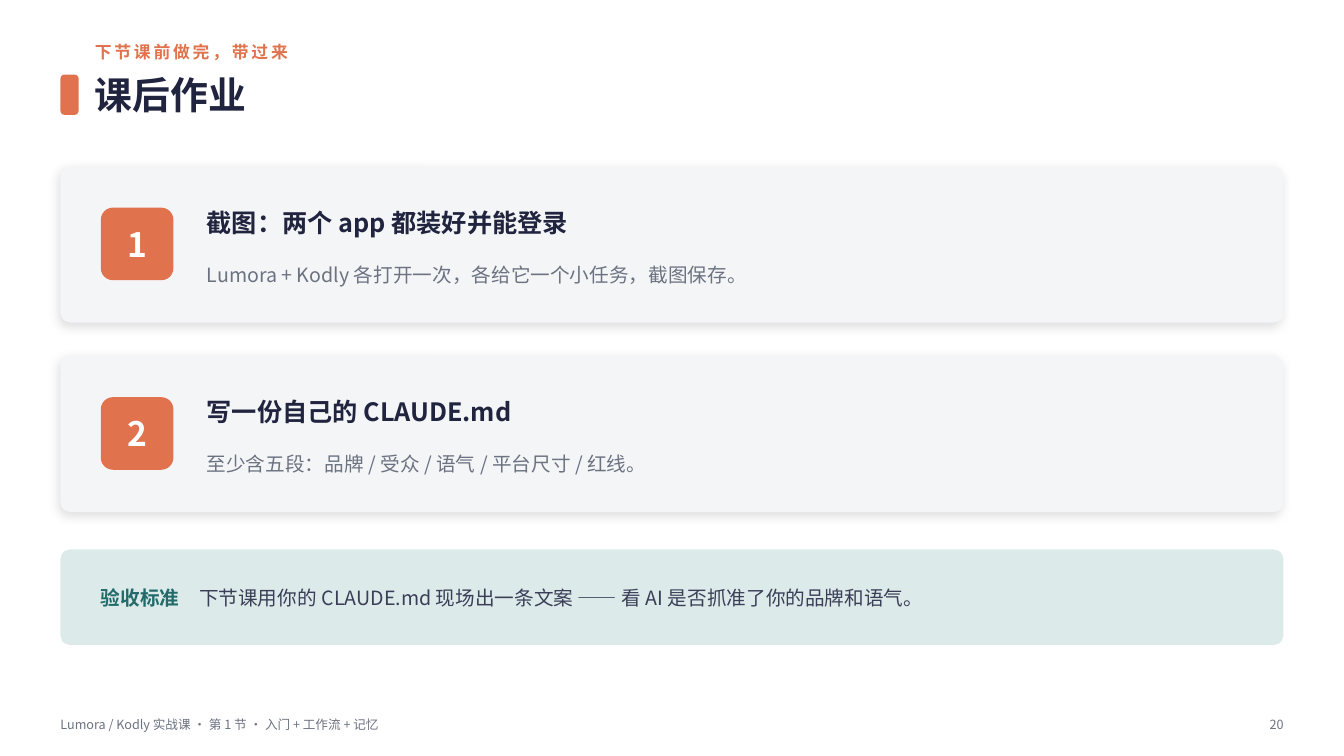
"""Build the homework slide with two task cards and a pass mark."""
from typing import NamedTuple

from lxml.etree import SubElement
from pptx import Presentation
from pptx.dml.color import RGBColor
from pptx.enum.shapes import MSO_SHAPE
from pptx.enum.text import MSO_ANCHOR, PP_ALIGN
from pptx.oxml.ns import qn
from pptx.util import Emu, Pt

PX = 9144
FONT = "Noto Sans CJK SC"
WHITE = RGBColor(0xFF, 0xFF, 0xFF)
BLACK = RGBColor(0x00, 0x00, 0x00)
CORAL = RGBColor(0xE0, 0x73, 0x4D)
NAVY = RGBColor(0x20, 0x24, 0x3F)
SLATE = RGBColor(0x3A, 0x3E, 0x57)
GREY = RGBColor(0x6B, 0x72, 0x80)
PALE = RGBColor(0xF4, 0xF5, 0xF7)
MINT = RGBColor(0xDC, 0xEA, 0xEA)
TEAL = RGBColor(0x23, 0x6B, 0x6B)
LEFT, WIDE = 60, 1213
TOP, PITCH = 165, 188


class Box(NamedTuple):
    left: int
    top: int
    width: int
    height: int

    def scale(self) -> list[Emu]:
        return [Emu(side * PX) for side in self]


class Style(NamedTuple):
    size: int
    color: RGBColor
    bold: bool = False
    track: int = 0


class Label(NamedTuple):
    box: Box
    spans: list[tuple[str, Style]]
    align: PP_ALIGN = PP_ALIGN.LEFT


class Panel(NamedTuple):
    box: Box
    round: int
    fill: RGBColor
    shade: bool = False


class Task(NamedTuple):
    title: str
    detail: str


TASKS = [
    Task("截图：两个 app 都装好并能登录",
         "Lumora + Kodly 各打开一次，各给它一个小任务，截图保存。"),
    Task("写一份自己的 CLAUDE.md",
         "至少含五段：品牌 / 受众 / 语气 / 平台尺寸 / 红线。"),
]
BODY = Style(14, GREY)
SMALL = Style(9, GREY)


def style_run(run, style: Style) -> None:
    font = run.font
    font.name, font.size, font.bold = FONT, Pt(style.size), style.bold
    font.color.rgb = style.color
    props = run._r.get_or_add_rPr()
    SubElement(props, qn("a:ea"), typeface=FONT)
    if style.track:
        props.set("spc", str(style.track * 100))


def draw_label(slide, label: Label) -> None:
    frame = slide.shapes.add_textbox(*label.box.scale()).text_frame
    frame.word_wrap = True
    frame.vertical_anchor = MSO_ANCHOR.MIDDLE
    frame.margin_left = frame.margin_right = 0
    frame.margin_top = frame.margin_bottom = 0
    line = frame.paragraphs[0]
    line.alignment = label.align
    line.text = label.spans[0][0]
    for text, _ in label.spans[1:]:
        line.add_run().text = text
    for run, (_, style) in zip(line.runs, label.spans):
        style_run(run, style)


def add_shade(shape) -> None:
    effect = shape._element.spPr.find(qn("a:effectLst"))
    cast = SubElement(effect, qn("a:outerShdw"), blurRad=str(Pt(7)),
                      dist=str(Pt(3)), dir=str(135 * 60000),
                      algn="bl", rotWithShape="0")
    tint = SubElement(cast, qn("a:srgbClr"), val=str(BLACK))
    SubElement(tint, qn("a:alpha"), val="12000")


def draw_panel(slide, panel: Panel) -> None:
    box = panel.box
    shape = slide.shapes.add_shape(MSO_SHAPE.ROUNDED_RECTANGLE, *box.scale())
    shape.adjustments[0] = panel.round / min(box.width, box.height)
    shape.fill.solid()
    shape.fill.fore_color.rgb = panel.fill
    shape.line.fill.background()
    shape.shadow.inherit = False
    if panel.shade:
        add_shade(shape)


def draw_task(slide, rank: int, task: Task) -> None:
    top = TOP + rank * PITCH
    badge = Box(100, top + 41, 72, 72)
    draw_panel(slide, Panel(Box(LEFT, top, WIDE, 155), 10, PALE, True))
    draw_panel(slide, Panel(badge, 12, CORAL))
    draw_label(slide, Label(badge, [(str(rank + 1), Style(24, WHITE, True))],
                            PP_ALIGN.CENTER))
    draw_label(slide, Label(Box(205, top + 28, 1028, 55),
                            [(task.title, Style(18, NAVY, True))]))
    draw_label(slide, Label(Box(205, top + 82, 1028, 50),
                            [(task.detail, BODY)]))


def draw_head(slide) -> None:
    draw_label(slide, Label(Box(94, 36, 1179, 30),
                            [("下节课前做完，带过来", Style(12, CORAL, True, 2))]))
    draw_panel(slide, Panel(Box(LEFT, 74, 18, 40), 4, CORAL))
    draw_label(slide, Label(Box(94, 64, 1179, 60),
                            [("课后作业", Style(27, NAVY, True))]))


def draw_goal(slide) -> None:
    draw_panel(slide, Panel(Box(LEFT, 545, WIDE, 95), 10, MINT))
    draw_label(slide, Label(Box(100, 545, 1133, 95), [
        ("验收标准　", Style(14, TEAL, True)),
        ("下节课用你的 CLAUDE.md 现场出一条文案 —— 看 AI 是否抓准了你的品牌和语气。",
         Style(14, SLATE)),
    ]))


def draw_foot(slide) -> None:
    draw_label(slide, Label(Box(LEFT, 704, 900, 30), [
        ("Lumora / Kodly 实战课 · 第 1 节 · 入门 + 工作流 + 记忆", SMALL)]))
    draw_label(slide, Label(Box(1203, 704, 70, 30), [("20", SMALL)],
                            PP_ALIGN.RIGHT))


def main() -> None:
    deck = Presentation()
    deck.slide_width, deck.slide_height = Emu(1333 * PX), Emu(750 * PX)
    slide = deck.slides.add_slide(deck.slide_layouts[6])
    draw_head(slide)
    for rank, task in enumerate(TASKS):
        draw_task(slide, rank, task)
    draw_goal(slide)
    draw_foot(slide)
    deck.save("out.pptx")


if __name__ == "__main__":
    main()
